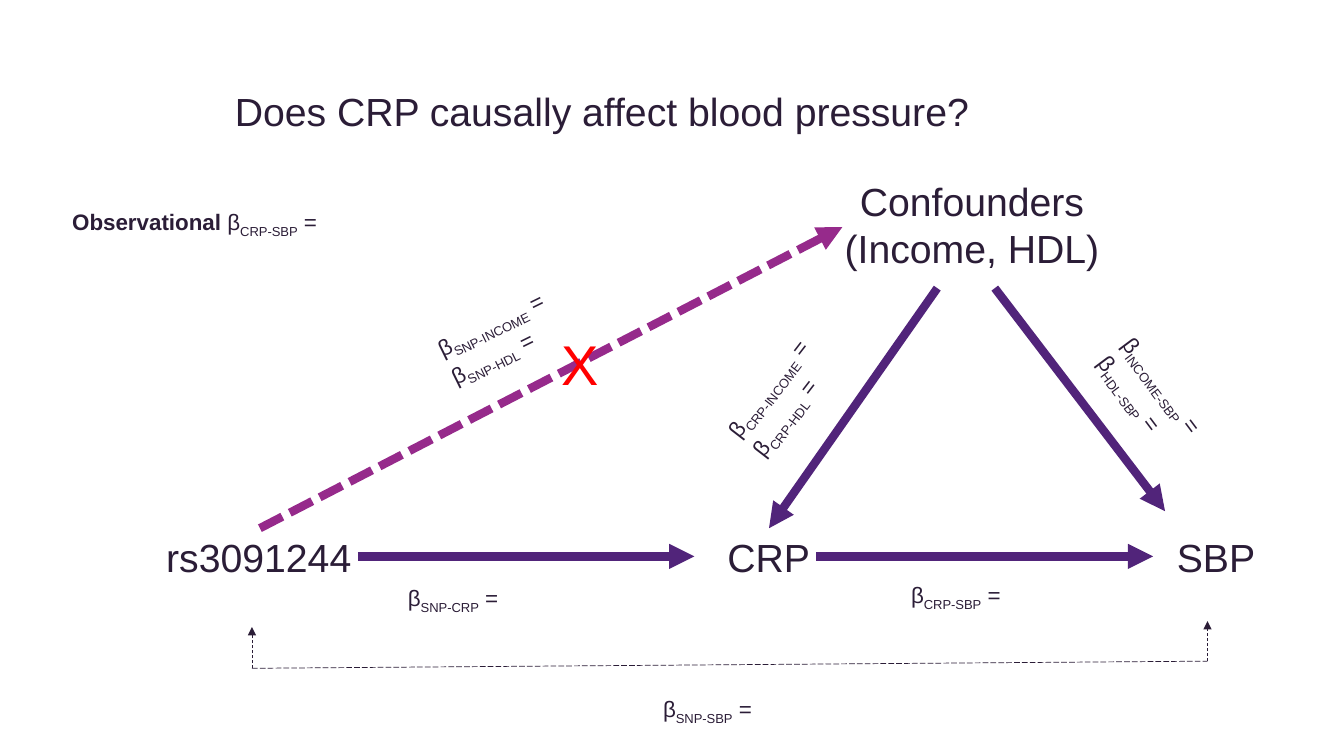
from pptx import Presentation
from pptx.dml.color import RGBColor
from pptx.enum.dml import MSO_LINE
from pptx.enum.shapes import MSO_CONNECTOR
from pptx.enum.text import MSO_ANCHOR, MSO_AUTO_SIZE, PP_ALIGN
from pptx.oxml.ns import qn
from pptx.util import Cm, Pt
from lxml import etree

STRAIGHT = MSO_CONNECTOR.STRAIGHT
CENTER, LEFT = PP_ALIGN.CENTER, PP_ALIGN.LEFT
MIDDLE = MSO_ANCHOR.MIDDLE
GROW, FIXED = MSO_AUTO_SIZE.SHAPE_TO_FIT_TEXT, MSO_AUTO_SIZE.NONE
SYS_DASH, LONG_DASH, DASH = MSO_LINE.SQUARE_DOT, MSO_LINE.LONG_DASH, MSO_LINE.DASH
FONT = "Arial"
COLORS = {"ink": "2B1D37", "path": "51247A", "bar": "962A8B", "cross": "FF0000"}


def color(name):
    return RGBColor.from_string(COLORS[name])


def add_run(para, text, size, tint="ink", bold=False, sub=False):
    run = para.add_run()
    run.text = text
    font = run.font
    font.name, font.size, font.bold = FONT, Pt(size), bold
    font.color.rgb = color(tint)
    if sub:
        run._r.get_or_add_rPr().set("baseline", "-25000")


def add_box(slide, x, y, w, h, wrap=False):
    box = slide.shapes.add_textbox(Cm(x), Cm(y), Cm(w), Cm(h))
    box.text_frame.word_wrap = wrap
    box.text_frame.auto_size = GROW
    return box


def add_text(slide, lines, x, y, w, h, size=28, tint="ink", align=LEFT):
    frame = add_box(slide, x, y, w, h).text_frame
    for i, line in enumerate(lines):
        para = frame.add_paragraph() if i else frame.paragraphs[0]
        para.alignment = align
        add_run(para, line, size, tint)


def add_betas(slide, pairs, x, y, w, turn=0, lead="", wrap=False):
    """Effect labels: a beta with the pair of traits as subscript."""
    box = add_box(slide, x, y, w, 0.94 if len(pairs) == 1 else 1.63, wrap)
    box.rotation = turn
    frame = box.text_frame
    for i, pair in enumerate(pairs):
        para = frame.add_paragraph() if i else frame.paragraphs[0]
        if lead:
            add_run(para, lead, 16, bold=True)
        add_run(para, "β", 16)
        add_run(para, pair, 16, sub=True)
        add_run(para, " =", 16)


def add_line(slide, start, end, tint="path", width=6, dash=None, arrow=True):
    line = slide.shapes.add_connector(STRAIGHT, *map(Cm, start + end))
    line.line.color.rgb = color(tint)
    line.line.width = Pt(width)
    if dash:
        line.line.dash_style = dash
    props = line._element.spPr
    if arrow:
        etree.SubElement(props.find(qn("a:ln")), qn("a:tailEnd"), type="triangle")
    etree.SubElement(props, qn("a:effectLst"))


def set_title(slide, text):
    title = slide.shapes.title
    title.left, title.top = Cm(0.56), Cm(2.21)
    title.width, title.height = Cm(29.21), Cm(1.32)
    frame = title.text_frame
    frame.auto_size, frame.vertical_anchor = FIXED, MIDDLE
    para = frame.paragraphs[0]
    para.alignment, para.line_spacing = CENTER, 0.9
    add_run(para, text, 28)


def main():
    prs = Presentation()
    prs.slide_width, prs.slide_height = Cm(33.87), Cm(19.05)
    slide = prs.slides.add_slide(prs.slide_layouts[5])
    set_title(slide, "Does CRP causally affect blood pressure?")

    # Nodes of the causal graph
    row = 13.31
    for name, x, w in (("rs3091244", 3.94, 5.23), ("CRP", 18.08, 2.62),
                       ("SBP", 29.41, 2.51)):
        add_text(slide, [name], x, row, w, 1.45)
    add_text(slide, ["Confounders", "(Income, HDL)"], 20.85, 4.34, 7.29, 2.64,
             align=CENTER)

    # Causal arrows
    mid = 14.02
    for start, end in (((9.02, mid), (17.5, mid)),
                       ((20.57, mid), (29.06, mid)),
                       ((23.62, 7.26), (19.38, row)),
                       ((25.07, 7.26), (29.36, 12.88))):
        add_line(slide, start, end)

    # Blocked path from variant to confounders
    add_line(slide, (6.55, row), (21.23, 5.72), "bar", dash=SYS_DASH)
    add_text(slide, ["X"], 13.89, 8.18, 1.24, 1.96, 40, "cross")

    # Effect labels
    add_betas(slide, ["CRP-SBP"], 1.57, 5.13, 8.15, lead="Observational ", wrap=True)
    add_betas(slide, ["SNP-SBP"], 16.46, 17.4, 3)
    add_betas(slide, ["CRP-SBP"], 22.71, 14.53, 3.02)
    add_betas(slide, ["SNP-CRP"], 10.03, 14.6, 3.05)
    add_betas(slide, ["SNP-INCOME", "SNP-HDL"], 10.8, 7.59, 3.76, 333.8)
    add_betas(slide, ["CRP-INCOME", "CRP-HDL"], 17.81, 8.97, 3.96, 307.5)
    add_betas(slide, ["INCOME-SBP", "HDL-SBP"], 27.25, 9.25, 3.73, 53.3)

    # Bracket joining variant and SBP
    left, right = (6.35, 16.84), (30.43, 16.66)
    add_line(slide, left, right, "ink", 0.5, LONG_DASH, arrow=False)
    for foot, top in ((left, 15.8), (right, 15.65)):
        add_line(slide, foot, (foot[0], top), "ink", 0.5, DASH)

    prs.save("out.pptx")


if __name__ == "__main__":
    main()
